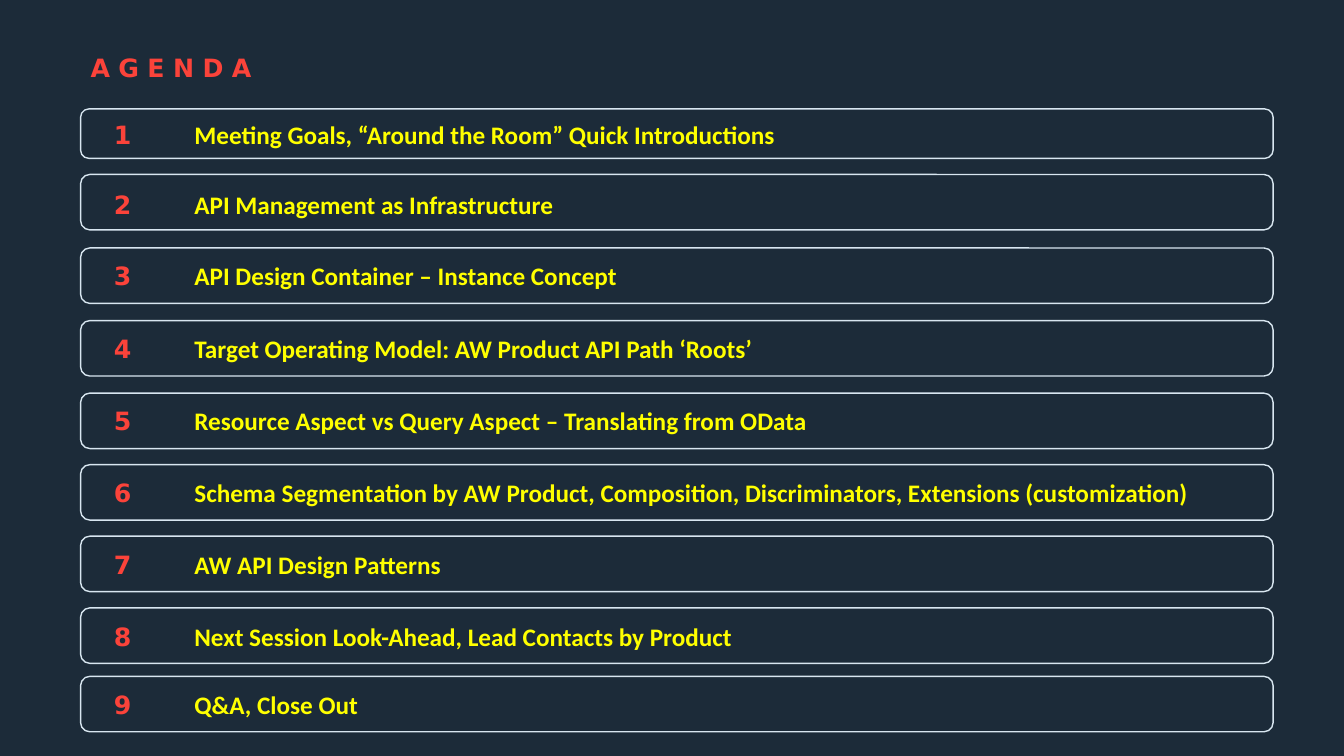
import pptx
import pptx.dml.color
import pptx.enum.shapes
import pptx.enum.text
import pptx.util

Pt = pptx.util.Pt
NAVY = pptx.dml.color.RGBColor(0x1C, 0x2B, 0x39)
RED = pptx.dml.color.RGBColor(0xFB, 0x43, 0x3A)
YELLOW = pptx.dml.color.RGBColor(0xFF, 0xFF, 0x00)
PALE_BLUE = pptx.dml.color.RGBColor(0xD8, 0xE6, 0xF0)

LEFT = 57.6
FRAME_WIDTH = 851.8
LABEL_HEIGHT = 28.8

# Frame top, frame height, label top, topic
TOPICS = [
    (77.8, 35.3, 81.4, "Meeting Goals, “Around the Room” Quick Introductions"),
    (124.6, 39.6, 131.8, "API Management as Infrastructure"),
    (177.1, 39.6, 182.2, "API Design Container – Instance Concept"),
    (229, 39.6, 234.7, "Target Operating Model: AW Product API Path ‘Roots’"),
    (280.8, 39.6, 285.8, "Resource Aspect vs Query Aspect – Translating from OData"),
    (331.9, 39.6, 337, "Schema Segmentation by AW Product, Composition, "
                       "Discriminators, Extensions (customization)"),
    (383, 39.6, 388.8, "AW API Design Patterns"),
    (434.2, 39.6, 439.9, "Next Session Look-Ahead, Lead Contacts by Product"),
    (483.1, 39.6, 488.9, "Q&A, Close Out"),
]


def add_text(page, text, left, top, width, height, *, font, color,
             tracking=0, line_spacing=None):
    """Add one bold 18 pt line; tracking is in points."""
    box = page.shapes.add_textbox(Pt(left), Pt(top), Pt(width), Pt(height))
    frame = box.text_frame
    frame.word_wrap = True
    frame.vertical_anchor = pptx.enum.text.MSO_ANCHOR.MIDDLE
    para = frame.paragraphs[0]
    if line_spacing:
        para.line_spacing = line_spacing
    span = para.add_run()
    span.text = text
    span.font.name = font
    span.font.size = Pt(18)
    span.font.bold = True
    span.font.color.rgb = color
    if tracking:
        span._r.get_or_add_rPr().set("spc", str(tracking * 100))


def add_topic(page, number, topic, left, top, width, height, label_top):
    frame = page.shapes.add_shape(
        pptx.enum.shapes.MSO_SHAPE.ROUNDED_RECTANGLE,
        Pt(left), Pt(top), Pt(width), Pt(height))
    frame.shadow.inherit = False
    frame.fill.background()
    frame.line.color.rgb = PALE_BLUE
    frame.line.width = Pt(1)
    add_text(page, str(number), left + 16.6, label_top, 43.9, LABEL_HEIGHT,
             font="DejaVu Sans", color=RED)
    add_text(page, topic, left + 74.2, label_top, width - 114.5, LABEL_HEIGHT,
             font="Calibri", color=YELLOW)


def add_agenda(deck):
    page = deck.slides.add_slide(deck.slide_layouts[6])
    page.background.fill.solid()
    page.background.fill.fore_color.rgb = NAVY
    add_text(page, "AGENDA", LEFT, 33.1, 705.6, 33.1, font="DejaVu Sans",
             color=RED, tracking=6, line_spacing=0.9)
    for number, (top, height, label_top, topic) in enumerate(TOPICS, 1):
        add_topic(page, number, topic, LEFT, top, FRAME_WIDTH, height, label_top)


def main():
    deck = pptx.Presentation()
    deck.slide_width = Pt(960)
    deck.slide_height = Pt(540)
    add_agenda(deck)
    deck.save("out.pptx")


if __name__ == "__main__":
    main()
